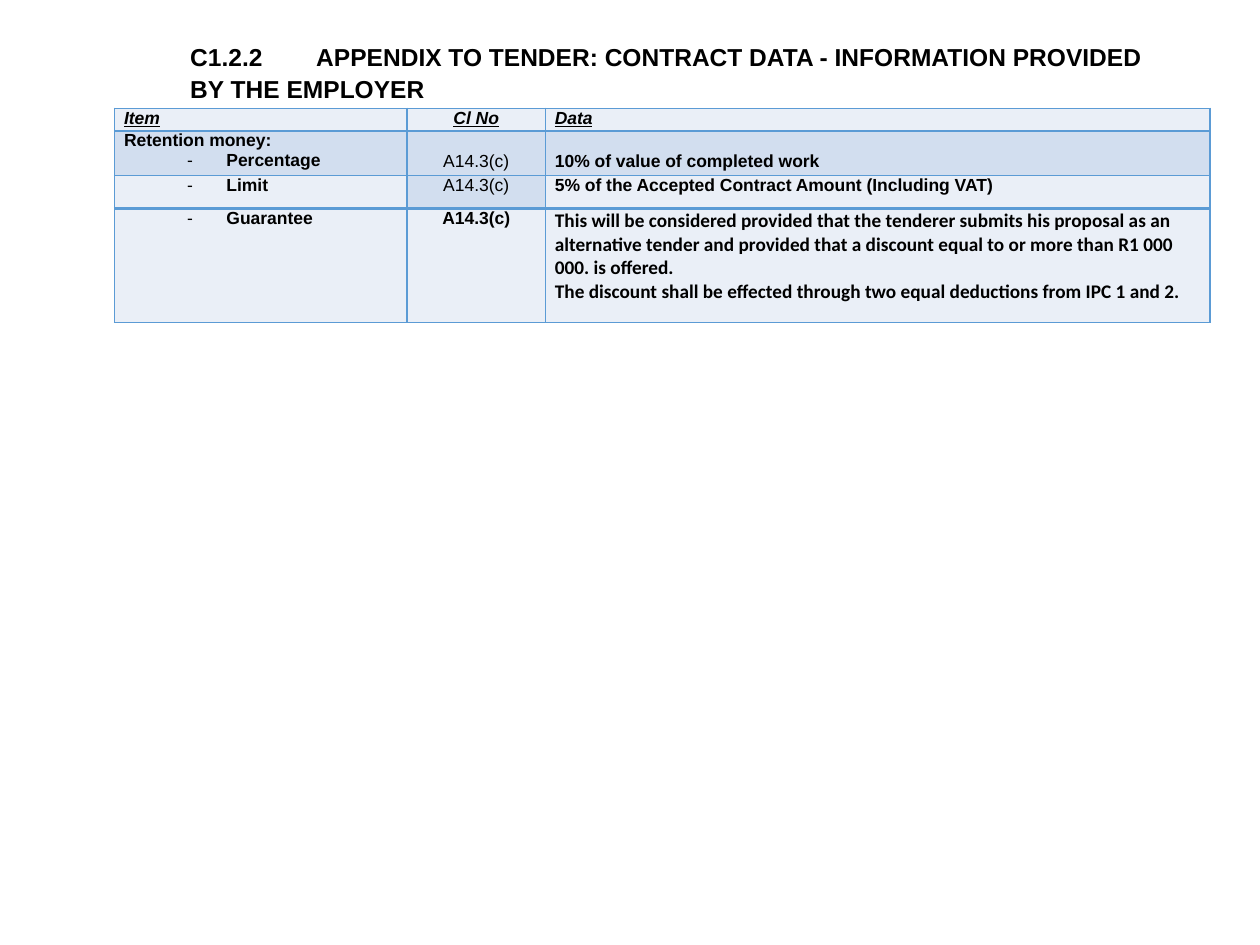
from lxml.etree import SubElement
from pptx import Presentation
from pptx.dml.color import RGBColor
from pptx.enum.text import MSO_ANCHOR, MSO_AUTO_SIZE, PP_ALIGN
from pptx.oxml.ns import qn
from pptx.util import Pt

LIGHT, MID, LINE, BLACK = "EAEFF7", "D2DEEF", "5B9BD5", "000000"
COLS = [167, 79.2, 379.8]
ROWS = [13, 25.4, 19, 65]
LINE_HEIGHT = 11.5

# Text formats
PLAIN = {"name": "Arial", "size": Pt(10), "bold": False}
BOLD = {**PLAIN, "bold": True}
HEAD = {**BOLD, "italic": True, "underline": True}
NOTE = {**BOLD, "name": "Calibri", "size": Pt(11)}
TITLE = {**BOLD, "size": Pt(14)}

# Each cell: lines, format, fill; a line starting with "- " is a bullet
TABLE = [
    [(["Item"], HEAD, LIGHT), (["Cl No"], HEAD, LIGHT), (["Data"], HEAD, LIGHT)],
    [(["Retention money:", "- Percentage"], BOLD, MID),
     (["A14.3(c)"], PLAIN, MID),
     (["10% of value of completed work"], BOLD, MID)],
    [(["- Limit"], BOLD, LIGHT),
     (["A14.3(c)"], PLAIN, MID),
     (["5% of the Accepted Contract Amount (Including VAT)"], BOLD, LIGHT)],
    [(["- Guarantee"], BOLD, LIGHT),
     (["A14.3(c)"], BOLD, LIGHT),
     (["This will be considered provided that the tenderer submits his proposal "
       "as an alternative tender and provided that a discount equal to or more "
       "than R1 000 000. is offered.",
       "The discount shall be effected through two equal deductions from IPC 1 and 2."],
      NOTE, LIGHT)],
]


def rgb(color):
    return RGBColor.from_string(color)


def write(p, text, fmt):
    r = p.add_run()
    r.text = text
    for key, value in fmt.items():
        setattr(r.font, key, value)
    r.font.color.rgb = rgb(BLACK)


def add_bullet(p):
    p.level = 1
    pPr = p._p.get_or_add_pPr()
    pPr.set("marL", str(Pt(58.5)))
    pPr.set("indent", str(Pt(-22.5)))
    SubElement(pPr, qn("a:buFont"), typeface="Arial")
    SubElement(pPr, qn("a:buChar"), char="-")


def set_borders(cell, widths):
    tcPr = cell._tc.get_or_add_tcPr()
    for i, (side, width) in enumerate(widths.items()):
        ln = tcPr.makeelement(qn(f"a:ln{side}"), {"w": str(Pt(width))})
        fill = SubElement(ln, qn("a:solidFill"))
        SubElement(fill, qn("a:srgbClr"), val=LINE)
        tcPr.insert(i, ln)


def fill_cell(cell, lines, fmt, fill, align):
    cell.margin_left = cell.margin_right = Pt(5.4)
    cell.margin_top = cell.margin_bottom = Pt(0)
    cell.fill.solid()
    cell.fill.fore_color.rgb = rgb(fill)
    tf = cell.text_frame
    for i, line in enumerate(lines):
        p = tf.add_paragraph() if i else tf.paragraphs[0]
        if line.startswith("- "):
            add_bullet(p)
        p.alignment = align
        write(p, line.removeprefix("- "), fmt)


def add_title(s, text):
    sp = s.shapes.title
    sp.left, sp.top, sp.width, sp.height = Pt(101.5), Pt(19.5), Pt(581), Pt(63.5)
    tf = sp.text_frame
    tf.word_wrap = True
    tf.auto_size = MSO_AUTO_SIZE.NONE
    tf.vertical_anchor = MSO_ANCHOR.TOP
    p = tf.paragraphs[0]
    p.alignment = PP_ALIGN.LEFT
    p.line_spacing = 1.07
    write(p, text, TITLE)


def add_data_table(s):
    table = s.shapes.add_table(len(ROWS), len(COLS), Pt(65.5), Pt(62),
                               Pt(sum(COLS)), Pt(sum(ROWS))).table
    for column, width in zip(table.columns, COLS):
        column.width = Pt(width)
    for row, height in zip(table.rows, ROWS):
        row.height = Pt(height)
    last = len(ROWS) - 1
    for i, row in enumerate(TABLE):
        for j, (lines, fmt, fill) in enumerate(row):
            cell = table.cell(i, j)
            align = PP_ALIGN.CENTER if j == 1 else PP_ALIGN.LEFT
            fill_cell(cell, lines, fmt, fill, align)
            # A heavier rule sets off the last row
            set_borders(cell, {"L": 1, "R": 1, "T": 2 if i == last else 1,
                               "B": 2 if i == last - 1 else 1})
    # Line up with the bullet below "Retention money:"
    for j in (1, 2):
        table.cell(1, j).margin_top = Pt(LINE_HEIGHT)


def main():
    prs = Presentation()
    prs.slide_width, prs.slide_height = Pt(720), Pt(540)
    s = prs.slides.add_slide(prs.slide_layouts[5])
    add_title(s, "C1.2.2\tAPPENDIX TO TENDER: CONTRACT DATA - "
                 "INFORMATION PROVIDED BY THE EMPLOYER")
    add_data_table(s)
    prs.save("out.pptx")


if __name__ == "__main__":
    main()
